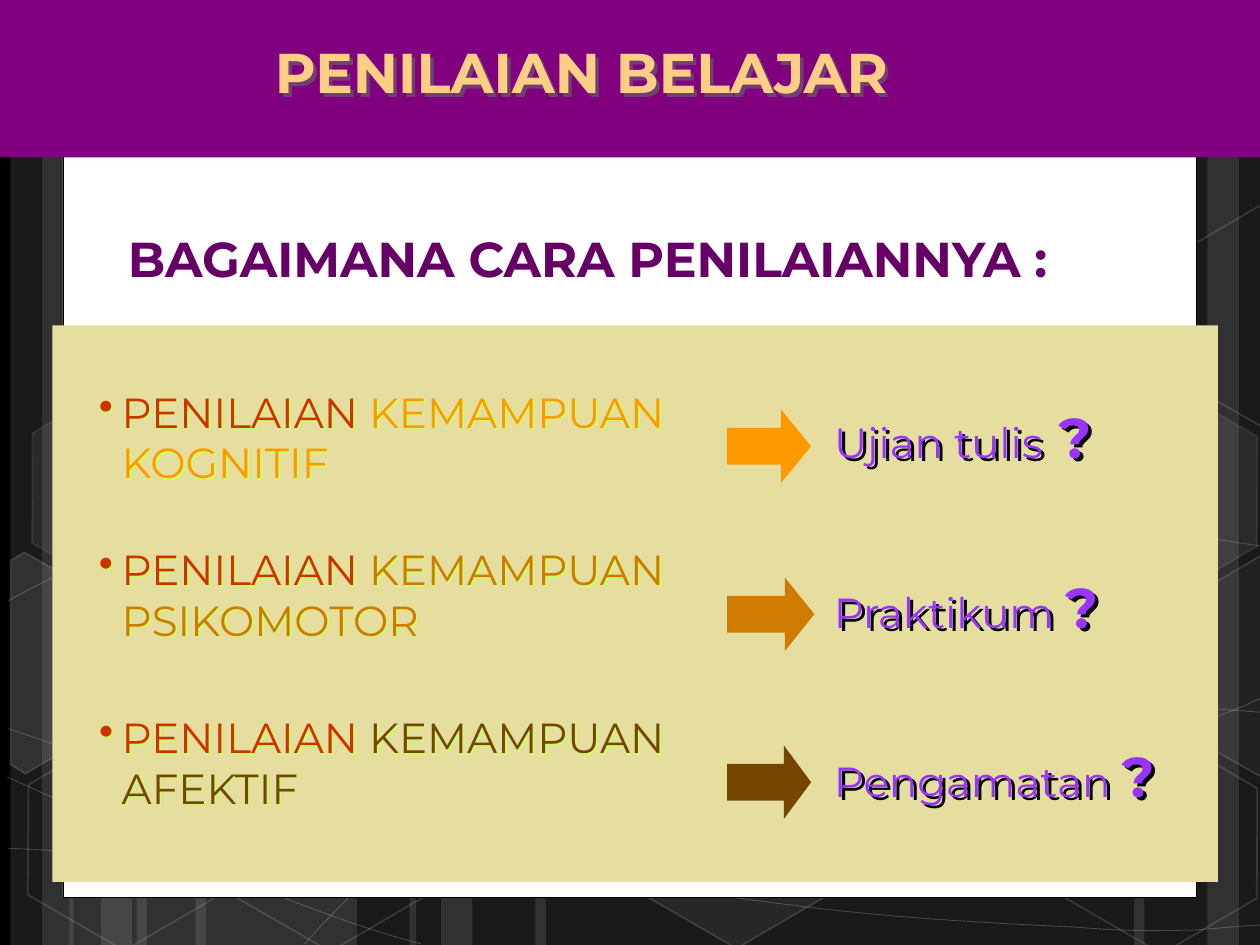
from math import cos, radians, sin

from lxml.etree import SubElement
from pptx import Presentation
from pptx.dml.color import RGBColor
from pptx.enum.shapes import MSO_SHAPE
from pptx.enum.text import MSO_AUTO_SIZE
from pptx.oxml.ns import qn
from pptx.util import Inches, Pt

CELL = Inches(10) / 120  # the page is a grid of 120 columns by 90 rows
TILT = 30

BLACK = RGBColor(0x00, 0x00, 0x00)
WHITE = RGBColor(0xFF, 0xFF, 0xFF)
PURPLE = RGBColor(0x80, 0x00, 0x80)
PLUM = RGBColor(0x66, 0x00, 0x66)
VIOLET = RGBColor(0x99, 0x33, 0xFF)
SAND = RGBColor(0xE5, 0xDE, 0x9F)
PEACH = RGBColor(0xFF, 0xCE, 0x85)
RED = RGBColor(0xCC, 0x33, 0x00)
ORANGE = RGBColor(0xFF, 0x99, 0x00)
OCHRE = RGBColor(0xCE, 0x7B, 0x00)
BROWN = RGBColor(0x76, 0x46, 0x00)
LIME = RGBColor(0xCC, 0xFF, 0x66)
MAUVE = RGBColor(0x70, 0x40, 0x70)

# left column, width
STRIPES = [(13, 21), (1, 6), (4, 10), (18.6, 21), (6.6, 6), (9.6, 10),
           (88, 21), (115, 6), (108, 10), (51, 37), (39, 6), (42, 10)]

# start point, then two control points and an end point for each segment
CURVES = [
    [(0.8, 80.8), (7.3, 81.1), (13.8, 81.5), (22.8, 81.4),
     (31.8, 81.2), (43, 81), (55, 79.8), (67, 78.6), (84, 76.3), (95, 74),
     (106, 71.8), (117.2, 68.2), (120.8, 66.1)],
    [(0.8, 57.2), (4.3, 55.3), (7.8, 53.5), (14.5, 51.7),
     (21.4, 49.9), (31.1, 47.3), (41.6, 46.4), (52.3, 45.6), (65.3, 45.5), (78.5, 46.4),
     (91.7, 47.4), (113.6, 51.1), (120.8, 52.1)],
    [(0.7, 74), (15.2, 80.6), (29.6, 87.2), (40.1, 89.9)],
    [(0.8, 69.4), (4.6, 70.7), (8.4, 72), (15.4, 73.9),
     (22.3, 75.7), (32.8, 78.7), (42.8, 80.8), (52.8, 82.8), (65.4, 85), (75.4, 86.2),
     (85.3, 87.5), (96, 88), (102.4, 88.3), (108.6, 88.8), (110.3, 88.6), (113.4, 88.6),
     (116.5, 88.4), (118.7, 88.1), (120.8, 88.1)],
    [(29, 89.9), (31.2, 87.5), (33.4, 85.1), (36.2, 82.9),
     (39.1, 80.8), (43.2, 78.4), (46.6, 76.7), (49.9, 75), (52, 74.3), (56.4, 73.1),
     (60.7, 71.9), (68.8, 70.2), (73, 69.4), (77.3, 68.5), (77.9, 68.5), (81.6, 68.3),
     (85.3, 67.9), (91.2, 67.6), (95.3, 67.4), (99.5, 67.3), (106.3, 67.4), (106.3, 67.4),
     (109, 67.4), (111.7, 67.4), (114.4, 67.4), (116.5, 67.6), (118.6, 67.7), (120.7, 67.9)],
]

# left column, top row, fill opacity, line opacity
HEXAGONS = [(59.6, 70.7, 6, 12), (1.3, 70.9, 0, 12), (1.7, 37.4, 7, 8),
            (20.9, 71, 0, 12), (100.1, 71.2, 0, 12), (100.1, 37.7, 7, 8)]
LEFT_EDGE = [(1, 53.4), (2.3, 52.6), (11.5, 57.8), (11.4, 68.4), (2.4, 73.7), (1, 72.8)]
RIGHT_EDGE = [(111.1, 58.2), (120.1, 52.9), (121.1, 53.5), (121.1, 73.6),
              (120.2, 74), (111.1, 68.8)]

# ability, colour, text row, text width, arrow width, arrow head, method, mark, row, width
ASSESSMENTS = [
    ("KEMAMPUAN KOGNITIF", ORANGE, 36.2, 59, 8, 0.41, "Ujian tulis", " ?", 37.7, 32),
    ("KEMAMPUAN PSIKOMOTOR", OCHRE, 51.2, 65, 8.3, 0.4, "Praktikum ", "?", 53.9, 30),
    ("KEMAMPUAN AFEKTIF", BROWN, 67.2, 57, 8, 0.37, "Pengamatan ", "?", 70, 35),
]


def cells(*lengths):
    return [round(length * CELL) for length in lengths]


def turn_back(points, center):
    """Undo the tilt, which the finished shape's rotation puts back."""
    cosine, sine = cos(radians(TILT)), sin(radians(TILT))
    middle_x, middle_y = center
    return [(middle_x + (x - middle_x) * cosine + (y - middle_y) * sine,
             middle_y - (x - middle_x) * sine + (y - middle_y) * cosine)
            for x, y in points]


class Painter:
    font = "Montserrat"

    def __init__(self, page):
        self.page = page

    def paint(self, shape, fill=None, opacity=100, line=None, width=1, line_opacity=100):
        shape.shadow.inherit = False
        if fill is None or not opacity:
            shape.fill.background()
        else:
            shape.fill.solid()
            shape.fill.fore_color.rgb = fill
            self.fade(shape.fill, opacity)
        if line is None:
            shape.line.fill.background()
        else:
            shape.line.color.rgb = line
            shape.line.width = Pt(width)
            self.fade(shape.line.fill, line_opacity)
        return shape

    def fade(self, fill, opacity):
        if opacity < 100:
            color = fill._xPr.find(qn("a:solidFill"))[0]
            SubElement(color, qn("a:alpha"), val=str(opacity * 1000))

    def shape(self, kind, place, adjustments=(), **look):
        shape = self.page.shapes.add_shape(kind, *cells(*place))
        for index, value in enumerate(adjustments):
            shape.adjustments[index] = value
        return self.paint(shape, **look)

    def outline(self, points, close, **look):
        corners = [cells(*point) for point in points]
        builder = self.page.shapes.build_freeform(*corners[0])
        builder.add_line_segments(corners[1:], close=close)
        return self.paint(builder.convert_to_shape(), line=WHITE, **look)

    def curve(self, points, **look):
        """Turn each three line segments of an open outline into one cubic curve."""
        shape = self.outline(points, False, **look)
        route = next(shape._element.iter(qn("a:lnTo"))).getparent()
        segments = route.findall(qn("a:lnTo"))
        for first in range(0, len(segments), 3):
            cubic = SubElement(route, qn("a:cubicBezTo"))
            for segment in segments[first:first + 3]:
                cubic.append(segment[0])
                route.remove(segment)

    def text(self, place, spans, shadow=None, distance=2.8, bullet=False):
        """Add one paragraph of spans, each given as text, size, colour and bold."""
        box = self.page.shapes.add_textbox(*cells(*place))
        frame = box.text_frame
        frame.word_wrap = True
        frame.auto_size = MSO_AUTO_SIZE.SHAPE_TO_FIT_TEXT
        para = frame.paragraphs[0]
        for words, size, color, bold in spans:
            span = para.add_run()
            span.text = words
            span.font.name = self.font
            span.font.size = Pt(size)
            span.font.bold = bold
            span.font.color.rgb = color
        if bullet:
            properties = para._p.get_or_add_pPr()
            properties.set("marL", str(Inches(0.18)))
            properties.set("indent", str(-Inches(0.18)))
            SubElement(properties, qn("a:buFontTx"))
            SubElement(properties, qn("a:buChar"), char="•")
        if shadow is not None:
            self.shade(box, shadow, distance)

    def shade(self, box, color, distance):
        """Cast the text's shadow down and to the right."""
        effects = SubElement(box._element.spPr, qn("a:effectLst"))
        cast = SubElement(effects, qn("a:outerShdw"), dist=str(Pt(distance)),
                          dir="2700000", algn="ctr", rotWithShape="0")
        SubElement(cast, qn("a:srgbClr"), val=str(color))


def draw_backdrop(painter):
    background = painter.page.background.fill
    background.solid()
    background.fore_color.rgb = BLACK
    for left, width in STRIPES:
        painter.shape(MSO_SHAPE.RECTANGLE, (left, 0, width, 90), fill=WHITE, opacity=10)
    for points in CURVES:
        painter.curve(points, width=0.5, line_opacity=20)
    for left, top, opacity, line_opacity in HEXAGONS:
        hexagon = painter.shape(MSO_SHAPE.HEXAGON, (left, top, 21, 18.2), (0.285, 1.155),
                                fill=WHITE, opacity=opacity, line=WHITE,
                                line_opacity=line_opacity)
        hexagon.rotation = TILT
    upper_edge = [(x, y - 33.4) for x, y in RIGHT_EDGE]
    for points, center, opacity in ((LEFT_EDGE, (4.3, 64.2), 10),
                                    (RIGHT_EDGE, (118.2, 62.4), 4),
                                    (upper_edge, (118.2, 29), 0)):
        edge = painter.outline(turn_back(points, center), True, fill=WHITE,
                               opacity=opacity, line_opacity=12)
        edge.rotation = TILT


def draw_content(painter):
    painter.shape(MSO_SHAPE.RECTANGLE, (6, 4.3, 108, 81.2), fill=WHITE, line=BLACK, width=0.5)
    painter.shape(MSO_SHAPE.RECTANGLE, (5, 31, 111, 53), fill=SAND)
    painter.shape(MSO_SHAPE.RECTANGLE, (0, 0, 120, 15), fill=PURPLE)
    painter.text((25, 3, 67.8, 7.6), [("PENILAIAN BELAJAR", 32, PEACH, True)], MAUVE)
    painter.text((11, 21.2, 101, 6.8), [("BAGAIMANA CARA PENILAIANNYA :", 28, PLUM, True)])
    for index, (ability, color, row, width, arrow_width, head,
                method, mark, answer_row, answer_width) in enumerate(ASSESSMENTS):
        painter.text((8.25, row, width, 10.8),
                     [("PENILAIAN ", 24, RED, False), (ability, 24, color, False)],
                     LIME, 1.4, bullet=True)
        painter.shape(MSO_SHAPE.RIGHT_ARROW, (69.25, 39 + 16 * index, arrow_width, 7),
                      (0.5, head), fill=color)
        painter.text((78.25, answer_row, answer_width, 7.6),
                     [(method, 24, VIOLET, False), (mark, 32, VIOLET, True)], BLACK)


def main():
    deck = Presentation()
    deck.slide_width, deck.slide_height = cells(120, 90)
    painter = Painter(deck.slides.add_slide(deck.slide_layouts[6]))
    draw_backdrop(painter)
    draw_content(painter)
    deck.save("out.pptx")


if __name__ == "__main__":
    main()
